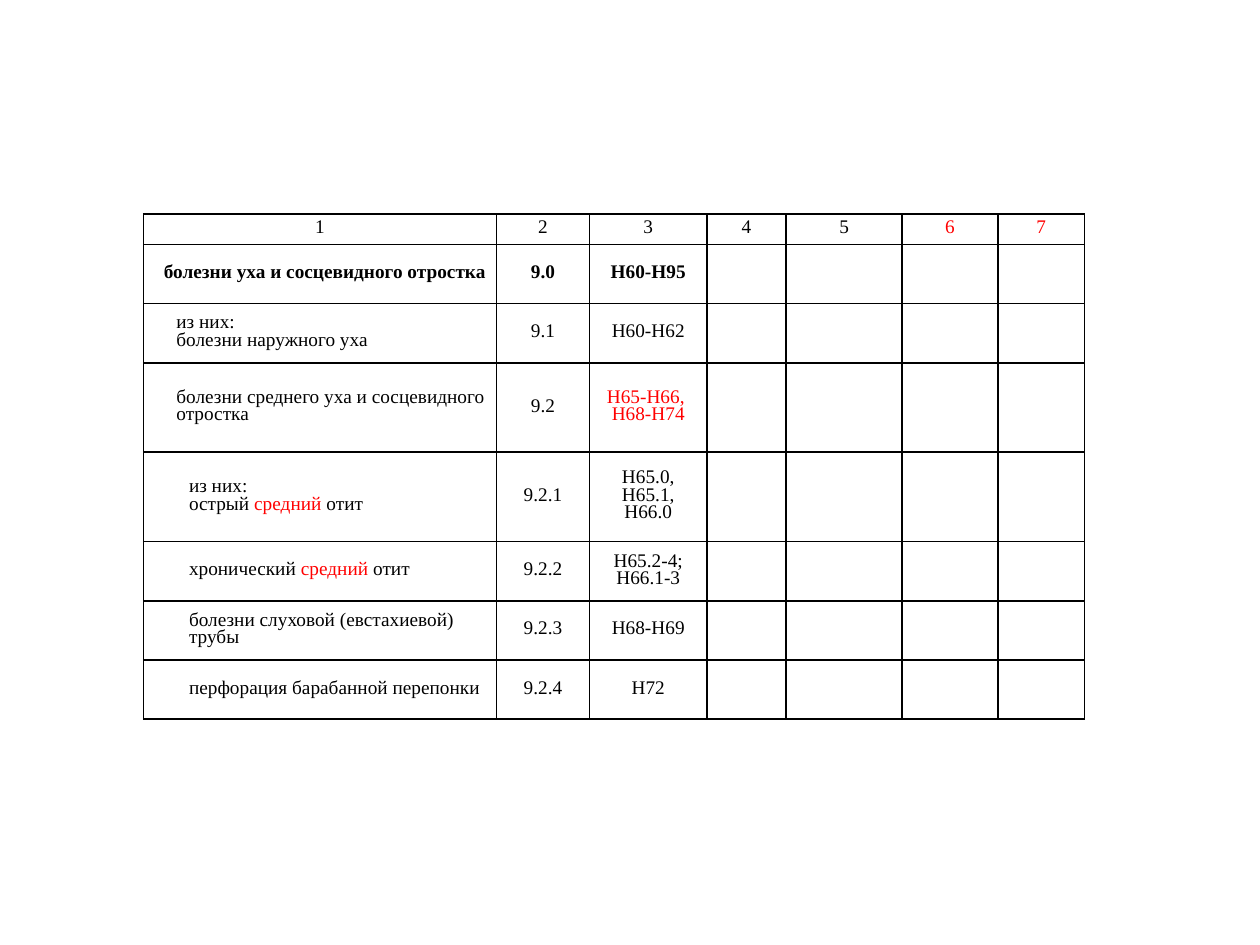
"""Build a slide with a table of ear disease classes and their codes."""
from lxml.etree import SubElement
from pptx import Presentation
from pptx.dml.color import RGBColor
from pptx.enum.text import MSO_ANCHOR, PP_ALIGN
from pptx.oxml.ns import qn
from pptx.util import Inches, Pt

BLACK = RGBColor(0x00, 0x00, 0x00)
RED = RGBColor(0xFF, 0x00, 0x00)
WHITE = RGBColor(0xFF, 0xFF, 0xFF)

COLUMN_WIDTHS = [2.8, 0.74, 0.93, 0.63, 0.92, 0.76, 0.69]
ROW_HEIGHTS = [0.24, 0.47, 0.47, 0.71, 0.71, 0.47, 0.47, 0.47]
NAME_INDENTS = [0, 0.09, 0.19, 0.19, 0.29, 0.29, 0.29, 0.29]
RED_MARK = "*"
ROWS = [
    ["1", "2", "3", "4", "5", "*6*", "*7*"],
    ["болезни уха и сосцевидного отростка", "9.0", "H60-H95"],
    ["из них:\nболезни наружного уха", "9.1", "H60-H62"],
    ["болезни среднего уха и сосцевидного\nотростка", "9.2", "*Н65-Н66, *\n*Н68-Н74*"],
    ["из них:\nострый *средний* отит", "9.2.1", "H65.0, H65.1, H66.0"],
    ["хронический *средний* отит", "9.2.2", "H65.2-4; H66.1-3"],
    ["болезни слуховой (евстахиевой) трубы", "9.2.3", "H68-H69"],
    ["перфорация барабанной перепонки", "9.2.4", "H72"],
]
CELL_FORMAT = {
    "vertical_anchor": MSO_ANCHOR.MIDDLE,
    "margin_left": Inches(0.07),
    "margin_right": Inches(0.07),
    "margin_top": 0,
    "margin_bottom": 0,
}
FONT_FORMAT = {"name": "Times New Roman", "size": Pt(11)}


def set_format(target, values):
    for name, value in values.items():
        setattr(target, name, value)


def add_borders(cell):
    properties = cell._tc.get_or_add_tcPr()
    for position, side in enumerate(["a:lnL", "a:lnR", "a:lnT", "a:lnB"]):
        line = SubElement(properties, qn(side), w=str(Pt(1)))
        fill = SubElement(line, qn("a:solidFill"))
        SubElement(fill, qn("a:srgbClr"), val=str(BLACK))
        properties.insert(position, line)


presentation = Presentation()
set_format(presentation, {"slide_width": Inches(10), "slide_height": Inches(7.5)})
slide = presentation.slides.add_slide(presentation.slide_layouts[6])
slide.background.fill.solid()
slide.background.fill.fore_color.rgb = WHITE

table = slide.shapes.add_table(
    len(ROW_HEIGHTS), len(COLUMN_WIDTHS), Inches(1.14), Inches(1.7),
    Inches(sum(COLUMN_WIDTHS)), Inches(sum(ROW_HEIGHTS)),
).table
set_format(table, {"first_row": False, "horz_banding": False})
for column, width in zip(table.columns, COLUMN_WIDTHS):
    column.width = Inches(width)
for row, height in zip(table.rows, ROW_HEIGHTS):
    row.height = Inches(height)

for cell in table.iter_cells():
    set_format(cell, CELL_FORMAT)
    cell.fill.background()
    add_borders(cell)

for row_index, (texts, indent) in enumerate(zip(ROWS, NAME_INDENTS)):
    for column_index, text in enumerate(texts):
        frame = table.cell(row_index, column_index).text_frame
        for line_index, line_text in enumerate(text.split("\n")):
            paragraph = frame.add_paragraph() if line_index else frame.paragraphs[0]
            paragraph.line_spacing = Pt(10)
            if column_index == 0 and indent:
                paragraph.alignment = PP_ALIGN.LEFT
                paragraph._p.get_or_add_pPr().set("marL", str(Inches(indent)))
            else:
                paragraph.alignment = PP_ALIGN.CENTER
            for part_index, part in enumerate(line_text.split(RED_MARK)):
                if part:
                    run = paragraph.add_run()
                    run.text = part
                    set_format(run.font, FONT_FORMAT)
                    run.font.bold = row_index == 1
                    run.font.color.rgb = RED if part_index % 2 else BLACK

presentation.save("out.pptx")
